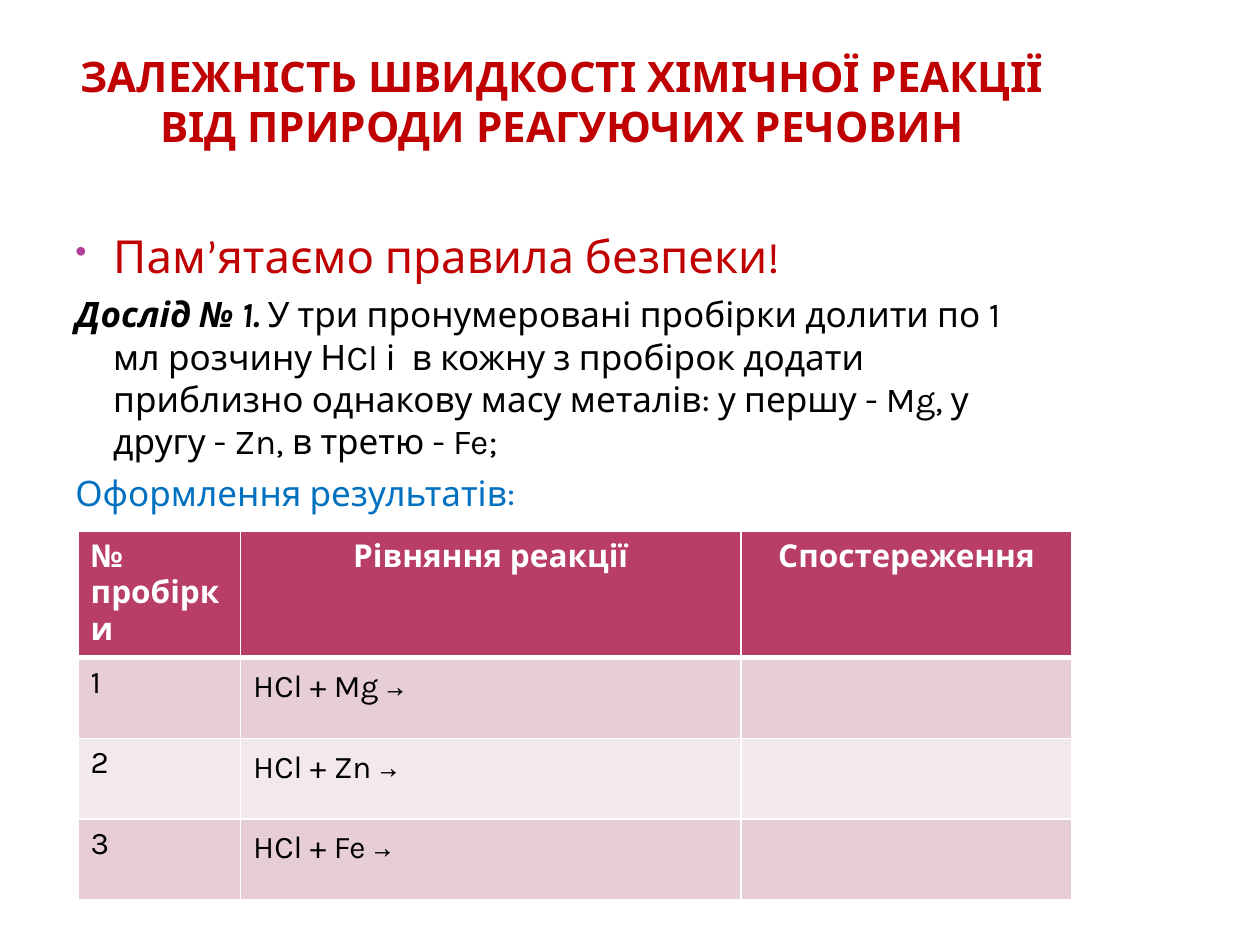
import pptx
import pptx.dml.color
import pptx.enum.text
import pptx.oxml
import pptx.oxml.ns
import pptx.util

COLORS = {"red": "C00000", "blue": "0070C0", "black": "000000", "white": "FFFFFF",
          "bullet": "B13F9A", "head": "B83D68", "odd": "E6CED4", "even": "F3E8EB"}
FONT = "Karla"
COLUMNS, ROWS = 100, 75
ALIGN = pptx.enum.text.PP_ALIGN


def grid(prs, col, row, cols, rows):
    """Turn grid columns and rows into left, top, width and height."""
    dx, dy = prs.slide_width / COLUMNS, prs.slide_height / ROWS
    return [round(v) for v in (col * dx, row * dy, cols * dx, rows * dy)]


def rgb(name):
    """Look up a colour by name."""
    return pptx.dml.color.RGBColor.from_string(COLORS[name])


def add_run(p, text, size=18, color="black", bold=False, italic=False, font=FONT):
    """Append formatted text to a paragraph."""
    r = p.add_run()
    r.text = text
    r.font.name, r.font.size = font, pptx.util.Pt(size)
    r.font.bold, r.font.italic = bold, italic
    r.font.color.rgb = rgb(color)


def append_xml(parent, xml, index=None):
    """Insert a DrawingML element under a parent."""
    tag, rest = xml.split(" ", 1)
    ns = pptx.oxml.ns.nsdecls("a")
    element = pptx.oxml.parse_xml(f"<a:{tag} {ns} {rest}")
    parent.insert(len(parent) if index is None else index, element)


def add_box(s, place, inset=(0.1, 0.05, 0.1, 0.05)):
    """Add a wrapping text box and return its text frame."""
    tf = s.shapes.add_textbox(*place).text_frame
    tf.word_wrap = True
    tf.margin_left, tf.margin_top, tf.margin_right, tf.margin_bottom = map(pptx.util.Inches, inset)
    return tf


def add_title(s, place):
    """Add the centred red heading."""
    tf = add_box(s, place, (0.05, 0, 0.05, 0.4))
    tf.vertical_anchor = pptx.enum.text.MSO_ANCHOR.BOTTOM
    p = tf.paragraphs[0]
    p.alignment = ALIGN.CENTER
    add_run(p, "ЗАЛЕЖНІСТЬ ШВИДКОСТІ ХІМІЧНОЇ РЕАКЦІЇ ВІД ПРИРОДИ РЕАГУЮЧИХ РЕЧОВИН",
            size=24, color="red", bold=True)


def add_body(s, place, paragraphs):
    """Add hanging paragraphs, the first one with a bullet."""
    tf = add_box(s, place)
    indent = pptx.util.Inches(0.3)
    for i, runs in enumerate(paragraphs):
        p = tf.add_paragraph() if i else tf.paragraphs[0]
        pPr = p._p.get_or_add_pPr()
        pPr.set("marL", str(indent))
        pPr.set("indent", str(-indent))
        if i:
            p.space_before = pptx.util.Pt(6)
        else:
            append_xml(pPr, f'buClr ><a:srgbClr val="{COLORS["bullet"]}"/></a:buClr>')
            append_xml(pPr, 'buSzPct val="73000"/>')
            append_xml(pPr, 'buChar char="•"/>')
        for text, style in runs:
            add_run(p, text, **style)


def style_cell(cell, fill, bottom=1):
    """Fill a cell and draw its white borders."""
    cell.fill.solid()
    cell.fill.fore_color.rgb = rgb(fill)
    tcPr = cell._tc.get_or_add_tcPr()
    for i, (side, width) in enumerate(zip("LRTB", (1, 1, 1, bottom))):
        append_xml(tcPr, f'ln{side} w="{pptx.util.Pt(width)}"><a:solidFill>'
                         f'<a:srgbClr val="{COLORS["white"]}"/></a:solidFill></a:ln{side}>', i)


def add_results(s, place, widths, headers, metals):
    """Add the results table with a row per test tube."""
    table = s.shapes.add_table(len(metals) + 1, len(headers), *place).table
    for column, width in zip(table.columns, widths):
        column.width = pptx.util.Inches(width)
    for row in table.rows:
        row.height = pptx.util.Inches(0.64)
    for c, text in enumerate(headers):
        cell = table.cell(0, c)
        style_cell(cell, "head", bottom=3)
        p = cell.text_frame.paragraphs[0]
        p.alignment = ALIGN.CENTER if c else ALIGN.LEFT
        add_run(p, text, color="white", bold=True)
    for n, metal in enumerate(metals, 1):
        number, equation, note = table.rows[n].cells
        for cell in (number, equation, note):
            style_cell(cell, "odd" if n % 2 else "even", bottom=1)
        add_run(number.text_frame.paragraphs[0], str(n))
        p = equation.text_frame.paragraphs[0]
        add_run(p, f"HCl + {metal} ")
        add_run(p, "→", font="Noto Sans Mono")
        note.text_frame.paragraphs[0].font.size = pptx.util.Pt(18)


def main():
    """Build the slide and save it."""
    prs = pptx.Presentation()
    prs.slide_width, prs.slide_height = pptx.util.Inches(10), pptx.util.Inches(7.5)
    s = prs.slides.add_slide(prs.slide_layouts[6])
    add_title(s, grid(prs, 5, 3.5, 79.2, 12.5))
    rule = {"size": 26, "color": "red"}
    add_body(s, grid(prs, 5, 17.6, 79.2, 53), [
        [("Пам", rule), ("’", {**rule, "font": "Calibri"}), ("ятаємо правила безпеки!", rule)],
        [("Дослід № 1. ", {"size": 20, "bold": True, "italic": True}),
         ("У три пронумеровані пробірки долити по 1 мл розчину НCl і  в кожну з пробірок "
          "додати приблизно однакову масу металів: у першу - Mg, у другу - Zn, "
          "в третю - Fe;", {"size": 20})],
        [("Оформлення результатів:", {"size": 20, "color": "blue"})],
    ])
    add_results(s, grid(prs, 6.2, 42.2, 78.9, 26.3), (1.29, 3.97, 2.63),
                ("№ пробірки", "Рівняння реакції", "Спостереження"), ("Mg", "Zn", "Fe"))
    prs.save("out.pptx")


if __name__ == "__main__":
    main()
